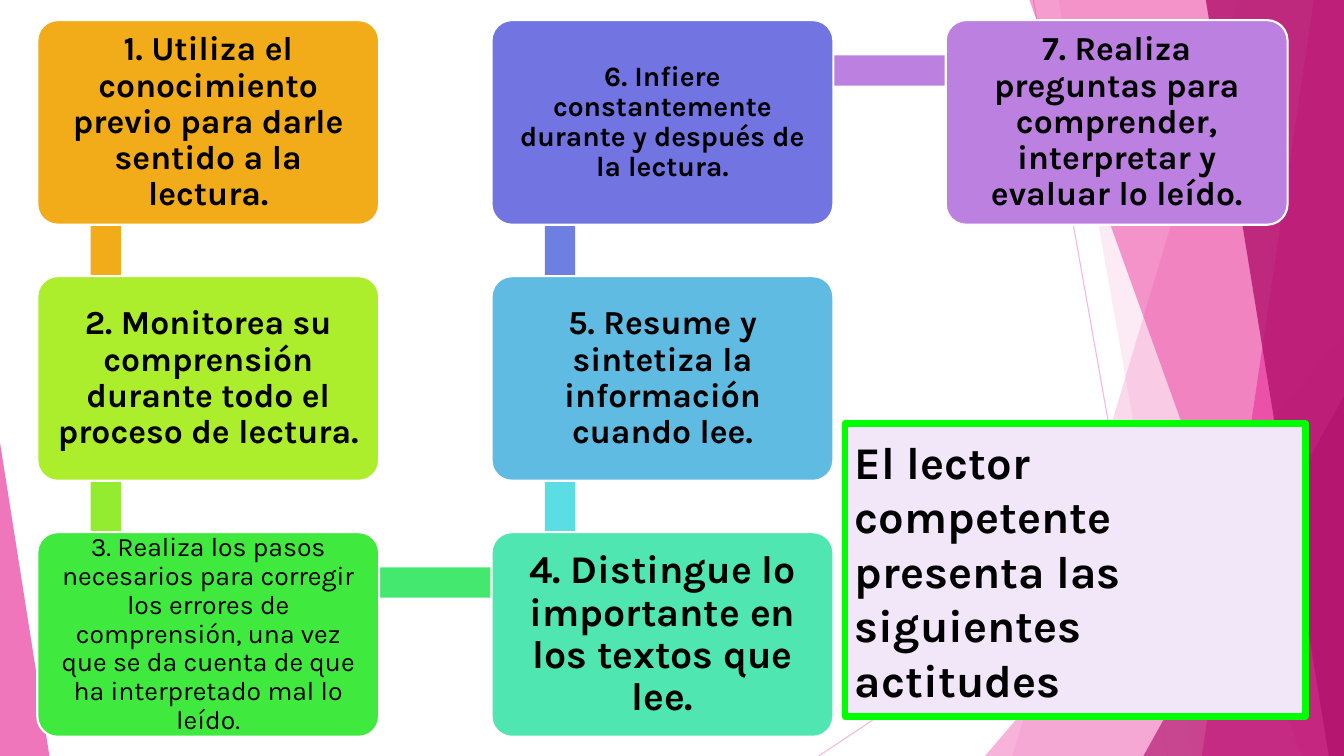
from lxml import etree
from pptx import Presentation
from pptx.dml.color import RGBColor
from pptx.enum.shapes import MSO_CONNECTOR, MSO_SHAPE
from pptx.enum.text import MSO_ANCHOR, MSO_AUTO_SIZE, PP_ALIGN
from pptx.oxml.ns import qn
from pptx.util import Inches, Pt

RECTANGLE = MSO_SHAPE.RECTANGLE
ROUNDED = MSO_SHAPE.ROUNDED_RECTANGLE
TRIANGLE = MSO_SHAPE.ISOSCELES_TRIANGLE
STRAIGHT = MSO_CONNECTOR.STRAIGHT
MIDDLE = MSO_ANCHOR.MIDDLE
NO_FIT = MSO_AUTO_SIZE.NONE
LEFT, CENTER = PP_ALIGN.LEFT, PP_ALIGN.CENTER

WIDTH, HEIGHT = 13.33, 7.5
FONT = "Karla"
BLACK = RGBColor(0x00, 0x00, 0x00)
WHITE = RGBColor(0xFF, 0xFF, 0xFF)
LIME = RGBColor(0x00, 0xFF, 0x00)
LILAC = RGBColor(0xF2, 0xE6, 0xF9)
LIGHT_PINK = RGBColor(0xF4, 0x96, 0xCB)
PINK = RGBColor(0xEB, 0x3D, 0x9F)
MAGENTA = RGBColor(0xB2, 0x13, 0x6D)
ORANGE = RGBColor(0xF2, 0xAC, 0x19)
YELLOW_GREEN = RGBColor(0xAC, 0xED, 0x2C)
LEAF = RGBColor(0x94, 0xEC, 0x30)
GREEN = RGBColor(0x3F, 0xE9, 0x3E)
EMERALD = RGBColor(0x45, 0xE8, 0x6F)
MINT = RGBColor(0x50, 0xE6, 0xB1)
CYAN = RGBColor(0x5A, 0xDE, 0xE4)
SKY = RGBColor(0x60, 0xBB, 0xE3)
BLUE = RGBColor(0x6D, 0x80, 0xE2)
INDIGO = RGBColor(0x71, 0x74, 0xE1)
VIOLET = RGBColor(0xBC, 0x80, 0xE0)

RAYS = [((10.25, 0), (11.58, HEIGHT)), ((WIDTH, 4.03), (8.12, HEIGHT))]
# Each band gives top x, bottom x; each triangle gives left, top, width, apex.
BACK_BANDS = [(12.28, 10.04, LIGHT_PINK, 36), (10.5, 11.83, LIGHT_PINK, 20)]
BACK_TRIANGLES = [(9.77, 3.33, 3.56, 1, LIGHT_PINK, 72)]
FRONT_BANDS = [(10.21, 12.91, PINK, 50), (13.03, 11.92, PINK, 70), (11.96, 13.18, MAGENTA, 80)]
FRONT_TRIANGLES = [(11.34, 3.93, 1.99, 1, MAGENTA, 66), (0, 4.39, 0.49, 0, PINK, 70)]

STEPS = [
    (0, 0, ORANGE, 24, True, "1. Utiliza el conocimiento previo para darle sentido a la lectura."),
    (0, 1, YELLOW_GREEN, 24, True, "2. Monitorea su comprensión durante todo el proceso de lectura."),
    (0, 2, GREEN, 19, False, "3. Realiza los pasos necesarios para corregir los errores de comprensión, "
     "una vez que se da cuenta de que ha interpretado mal lo leído."),
    (1, 2, MINT, 28, True, "4. Distingue lo importante en los textos que lee."),
    (1, 1, SKY, 24, True, "5. Resume y sintetiza la información cuando lee."),
    (1, 0, INDIGO, 20, True, "6. Infiere constantemente durante y después de la lectura."),
    (2, 0, VIOLET, 24, True, "7. Realiza preguntas para comprender, interpretar y evaluar lo leído."),
]
LINKS = [ORANGE, LEAF, EMERALD, CYAN, BLUE, VIOLET]


def set_alpha(shape, percent):
    """Make the colour of a shape or line partly transparent."""
    color = next(shape._element.spPr.iter(qn("a:srgbClr")))
    etree.SubElement(color, qn("a:alpha")).set("val", str(percent * 1000))


def paint(shape, color, alpha=100):
    """Give a shape a plain fill without outline or shadow."""
    shape.shadow.inherit = False
    shape.fill.solid()
    shape.fill.fore_color.rgb = color
    shape.line.fill.background()
    if alpha < 100:
        set_alpha(shape, alpha)


def add_block(slide, kind, box, color, alpha=100):
    """Add a filled preset shape in a box given in inches."""
    shape = slide.shapes.add_shape(kind, *map(Inches, box))
    paint(shape, color, alpha)
    return shape


def write(shape, text, size, bold, alignment):
    """Write one paragraph in the middle of a shape."""
    frame = shape.text_frame
    frame.text = text
    frame.word_wrap = True
    frame.auto_size = NO_FIT
    frame.vertical_anchor = MIDDLE
    paragraph = frame.paragraphs[0]
    paragraph.alignment = alignment
    font = paragraph.runs[0].font
    font.name, font.size, font.bold = FONT, Pt(size), bold
    font.color.rgb = BLACK
    return frame


def add_facets(slide, bands, triangles):
    """Add slanted bands at the right edge, then triangles on the bottom edge."""
    for top_x, bottom_x, color, alpha in bands:
        builder = slide.shapes.build_freeform(Inches(top_x), 0)
        corners = [(WIDTH, 0), (WIDTH, HEIGHT), (bottom_x, HEIGHT)]
        builder.add_line_segments([(Inches(x), Inches(y)) for x, y in corners])
        paint(builder.convert_to_shape(), color, alpha)
    for left, top, width, apex, color, alpha in triangles:
        box = (left, top, width, HEIGHT - top)
        add_block(slide, TRIANGLE, box, color, alpha).adjustments[0] = apex


def add_backdrop(slide):
    """Draw the thin rays and the translucent pink facets."""
    for start, end in RAYS:
        ray = slide.shapes.add_connector(STRAIGHT, *map(Inches, start + end))
        ray.line.color.rgb = LIGHT_PINK
        ray.line.width = Pt(0.75)
        set_alpha(ray, 70)
        etree.SubElement(ray._element.spPr, qn("a:effectLst"))
    add_facets(slide, BACK_BANDS, BACK_TRIANGLES)
    add_facets(slide, FRONT_BANDS, FRONT_TRIANGLES)


def add_title(slide, box):
    """Place the framed title above the backdrop."""
    title = slide.shapes.title
    slide.shapes._spTree.append(title._element)
    title.left, title.top, title.width, title.height = map(Inches, box)
    title.fill.solid()
    title.fill.fore_color.rgb = LILAC
    title.line.color.rgb = LIME
    title.line.width = Pt(4.5)
    text = "El lector competente presenta las siguientes actitudes"
    frame = write(title, text, 32.4, True, LEFT)
    frame.margin_left, frame.margin_right = Inches(0.1), Inches(0.2)


def add_steps(slide, box):
    """Lay the cards on a 3 by 3 grid and link each to the next."""
    left, top, width, height = box
    card_width, card_height, thickness = 3.39, 2.03, 0.3
    pitch_x, pitch_y = (width - card_width) / 2, (height - card_height) / 2
    for step, following, color in zip(STEPS, STEPS[1:], LINKS):
        column, row = step[0], min(step[1], following[1])
        x, y = left + column * pitch_x, top + row * pitch_y
        if column == following[0]:
            link = (x + 0.53, y + card_height / 4, thickness, pitch_y)
        else:
            link = (x + 0.69, y + 0.35, pitch_x, thickness)
        add_block(slide, RECTANGLE, link, color)
    for column, row, color, size, bold, text in STEPS:
        place = (left + column * pitch_x, top + row * pitch_y, card_width, card_height)
        card = add_block(slide, ROUNDED, place, color)
        card.adjustments[0] = 0.1
        card.line.color.rgb = WHITE
        card.line.width = Pt(1.5)
        frame = write(card, text, size, bold, CENTER)
        frame.paragraphs[0].line_spacing = 0.9
        inset = Pt(size * 0.3)
        frame.margin_left = frame.margin_right = inset
        frame.margin_top = frame.margin_bottom = inset


def main():
    """Build and save the slide."""
    presentation = Presentation()
    presentation.slide_width, presentation.slide_height = Inches(WIDTH), Inches(HEIGHT)
    slide = presentation.slides.add_slide(presentation.slide_layouts[5])
    add_backdrop(slide)
    add_title(slide, (8.38, 4.2, 4.57, 2.91))
    add_steps(slide, (0.37, 0.2, 12.4, 7.11))
    presentation.save("out.pptx")


if __name__ == "__main__":
    main()
